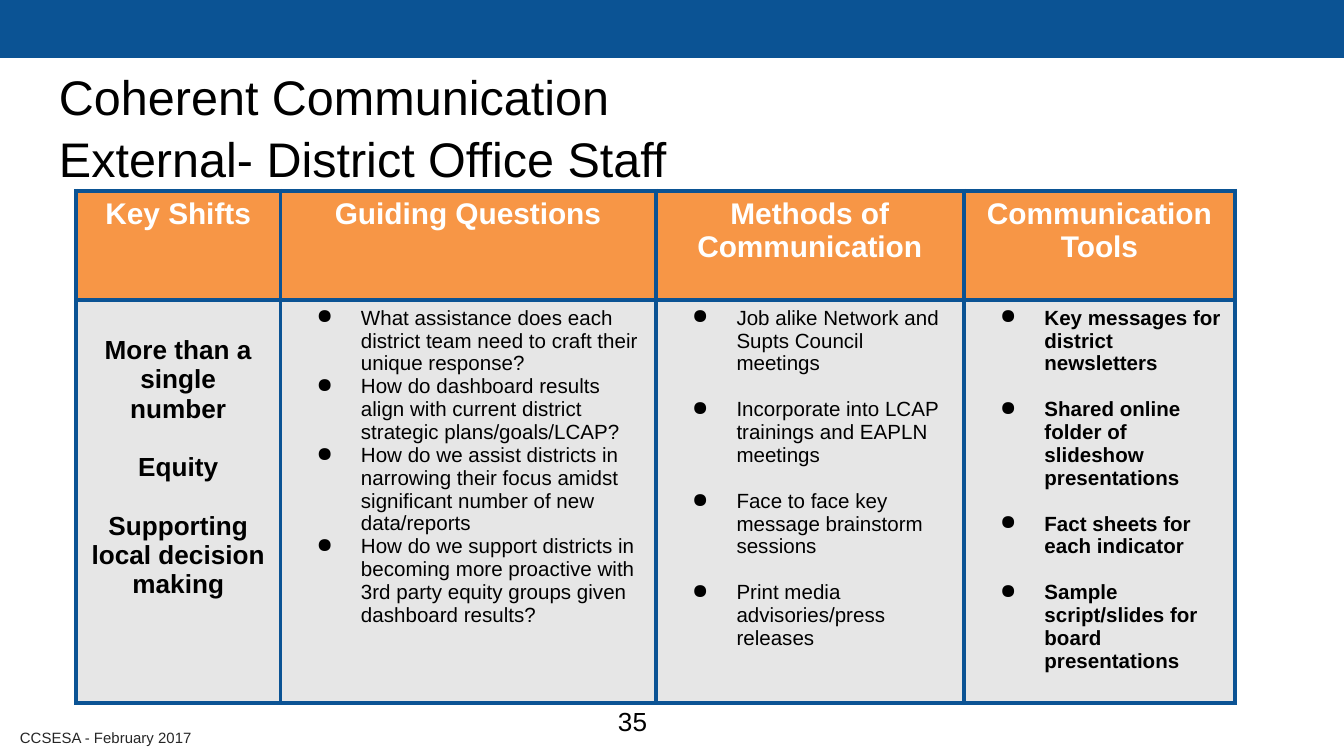
from lxml.etree import SubElement
from pptx import Presentation
from pptx.dml.color import RGBColor
from pptx.enum.shapes import MSO_SHAPE
from pptx.enum.text import MSO_ANCHOR, PP_ALIGN
from pptx.oxml.ns import qn
from pptx.util import Pt

BLUE = RGBColor(0x0B, 0x53, 0x94)
ORANGE = RGBColor(0xF7, 0x96, 0x46)
GRAY = RGBColor(0xE6, 0xE6, 0xE6)
WHITE = RGBColor(0xFF, 0xFF, 0xFF)
BLACK = RGBColor(0, 0, 0)
CHARCOAL = RGBColor(0x26, 0x26, 0x26)


class SlideBuilder:
    font_name = "Arial"
    inset = Pt(7.2)
    border_width = Pt(2.25)

    def __init__(self, slide):
        self.slide = slide

    def band(self, left, top, width, height, color):
        band = self.slide.shapes.add_shape(
            MSO_SHAPE.RECTANGLE, Pt(left), Pt(top), Pt(width), Pt(height))
        band.shadow.inherit = False
        band.fill.solid()
        band.fill.fore_color.rgb = color
        band.line.fill.background()

    def fill_text(self, frame, paragraphs, size, color, bold=False,
                  align=PP_ALIGN.LEFT, gap=0, bullet=None, line_spacing=None):
        style = {"name": self.font_name, "size": Pt(size), "bold": bold}
        for index, words in enumerate(paragraphs):
            paragraph = frame.add_paragraph() if index else frame.paragraphs[0]
            if bullet:
                properties = paragraph._p.get_or_add_pPr()
                properties.set("marL", str(Pt(36)))
                properties.set("indent", str(Pt(-23.76)))
                SubElement(properties, qn("a:buChar"), char=bullet)
            paragraph.text = words
            layout = {"alignment": align, "line_spacing": line_spacing,
                      "space_before": Pt(gap) if index and gap else None}
            for name, value in layout.items():
                setattr(paragraph, name, value)
            for run in paragraph.runs:
                for name, value in style.items():
                    setattr(run.font, name, value)
                run.font.color.rgb = color

    def text(self, left, top, width, height, words, size, color,
             anchor=MSO_ANCHOR.MIDDLE, line_spacing=None):
        box = self.slide.shapes.add_textbox(
            Pt(left), Pt(top), Pt(width), Pt(height))
        frame = box.text_frame
        settings = {"word_wrap": True, "vertical_anchor": anchor}
        sides = ("left", "top", "right", "bottom")
        settings.update({f"margin_{side}": self.inset for side in sides})
        for name, value in settings.items():
            setattr(frame, name, value)
        self.fill_text(frame, [words], size, color, line_spacing=line_spacing)

    def borders(self, cell, color):
        properties = cell._tc.get_or_add_tcPr()
        for position, side in enumerate(("lnL", "lnR", "lnT", "lnB")):
            line = properties.makeelement(
                qn(f"a:{side}"), {"w": str(self.border_width)})
            fill = SubElement(line, qn("a:solidFill"))
            SubElement(fill, qn("a:srgbClr"), val=str(color))
            properties.insert(position, line)

    def table(self, left, top, widths, heights, columns):
        table = self.slide.shapes.add_table(
            len(heights), len(widths), Pt(left), Pt(top),
            Pt(sum(widths)), Pt(sum(heights))).table
        for row, height in zip(table.rows, heights):
            row.height = Pt(height)
        for index, (width, (heading, items, style)) in enumerate(
                zip(widths, columns)):
            table.columns[index].width = Pt(width)
            header, body = table.cell(0, index), table.cell(1, index)
            for cell, color in ((header, ORANGE), (body, GRAY)):
                cell.fill.solid()
                cell.fill.fore_color.rgb = color
                self.borders(cell, BLUE)
            self.fill_text(header.text_frame, [heading], 16, WHITE, True,
                           PP_ALIGN.CENTER)
            self.fill_text(body.text_frame, items, color=BLACK, **style)
        return table


SHIFT_STYLE = {"size": 14, "bold": True, "align": PP_ALIGN.CENTER, "gap": 15.6}
QUESTION_STYLE = {"size": 11, "bullet": "●"}
METHOD_STYLE = {**QUESTION_STYLE, "gap": 12.3}
TOOL_STYLE = {**METHOD_STYLE, "bold": True}

COLUMNS = [
    ("Key Shifts", [
        "More than a single number",
        "Equity",
        "Supporting local decision making",
    ], SHIFT_STYLE),
    ("Guiding Questions", [
        "What assistance does each district team need to craft their unique response?",
        "How do dashboard results align with current district strategic plans/goals/LCAP?",
        "How do we assist districts in narrowing their focus amidst significant number of new data/reports",
        "How do we support districts in becoming more proactive with 3rd party equity groups given dashboard results?",
    ], QUESTION_STYLE),
    ("Methods of Communication", [
        "Job alike Network and Supts Council meetings",
        "Incorporate into LCAP trainings and EAPLN meetings",
        "Face to face key message brainstorm sessions",
        "Print media advisories/press releases",
    ], METHOD_STYLE),
    ("Communication Tools", [
        "Key messages for district newsletters",
        "Shared online folder of slideshow presentations",
        "Fact sheets for each indicator",
        "Sample script/slides for board presentations",
    ], TOOL_STYLE),
]


def main():
    presentation = Presentation()
    presentation.slide_width, presentation.slide_height = Pt(720), Pt(405)
    slide = presentation.slides.add_slide(presentation.slide_layouts[6])
    builder = SlideBuilder(slide)

    # Footer, top band and title
    builder.text(3.6, 388.8, 114.5, 12.2, "CCSESA - February 2017", 8, CHARCOAL)
    builder.band(0, 0, 720, 31, BLUE)
    builder.text(24.5, 26.6, 671, 82,
                 "Coherent Communication\vExternal- District Office Staff",
                 26, BLACK, MSO_ANCHOR.TOP, 1.07)

    # Page number
    builder.text(324, 370.8, 43.2, 31, "35", 14, BLACK)

    # Communication plan
    plan = builder.table(40.8, 102.2, [109.4, 201.2, 165, 145.4],
                         [58.5, 203.6], COLUMNS)
    plan.cell(1, 0).margin_top = Pt(19.2)

    presentation.save("out.pptx")


if __name__ == "__main__":
    main()
